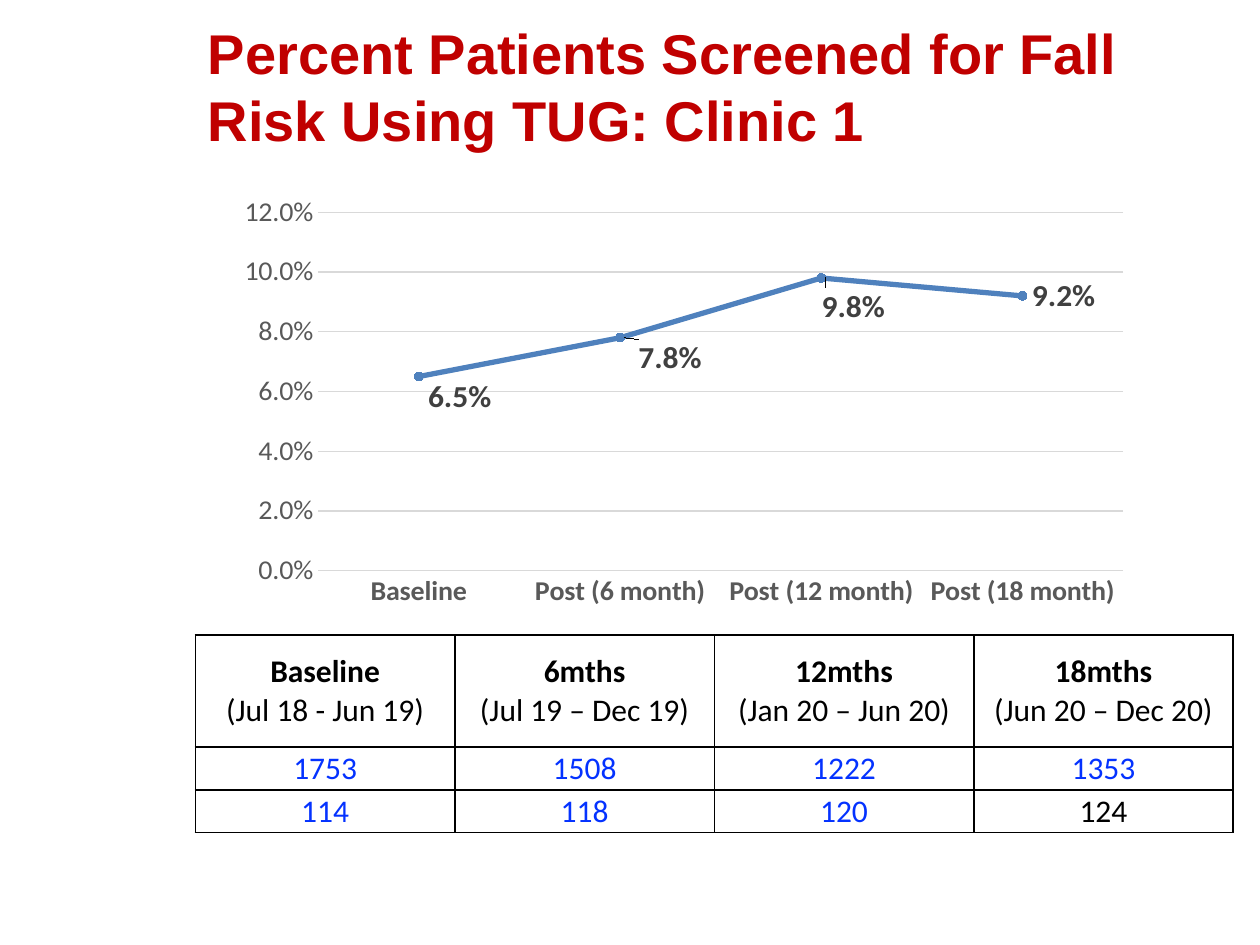
import pptx
import pptx.chart.data
import pptx.dml.color
import pptx.enum.chart
import pptx.enum.dml
import pptx.enum.text
import pptx.oxml
import pptx.oxml.ns
import pptx.util

Cm = pptx.util.Cm
Pt = pptx.util.Pt
RGB = pptx.dml.color.RGBColor.from_string
CENTER = pptx.enum.text.PP_ALIGN.CENTER
MIDDLE = pptx.enum.text.MSO_ANCHOR.MIDDLE

colors = {
    "title": "C00000", "line": "4F81BD", "grid": "D9D9D9",
    "axis": "595959", "label": "404040", "count": "0432FF", "text": "000000",
}


def format_font(font, size, color, bold=False, name="Calibri"):
    for key, value in {"size": Pt(size), "bold": bold, "name": name}.items():
        setattr(font, key, value)
    font.color.rgb = RGB(colors[color])


def manual_layout(target, **values):
    children = "".join(f'<c:{key} val="{value}"/>' for key, value in values.items())
    return pptx.oxml.parse_xml(
        f'<c:layout {pptx.oxml.ns.nsdecls("c")}><c:manualLayout>{target}{children}'
        "</c:manualLayout></c:layout>"
    )


presentation = pptx.Presentation()
presentation.slide_width = Cm(25.4)
presentation.slide_height = Cm(19.05)
slide = presentation.slides.add_slide(presentation.slide_layouts[6])

title = slide.shapes.add_textbox(Cm(3.94), Cm(0.23), Cm(19.74), Cm(3))
title.text_frame.word_wrap = True
title.text_frame.vertical_anchor = MIDDLE
run = title.text_frame.paragraphs[0].add_run()
run.text = "Percent Patients Screened for Fall Risk Using TUG: Clinic 1"
format_font(run.font, 32, "title", True, "Arial")

chart_data = pptx.chart.data.CategoryChartData(number_format="0.0%")
chart_data.categories = ["Baseline", "Post (6 month)", "Post (12 month)", "Post (18 month)"]
chart_data.add_series("Series 1", [0.065, 0.078, 0.098, 0.092])
chart = slide.shapes.add_chart(
    pptx.enum.chart.XL_CHART_TYPE.LINE_MARKERS,
    Cm(4.65), Cm(3.84), Cm(18.16), Cm(8.43), chart_data,
).chart
format_font(chart.font, 10, "text")
chart.has_legend = False
chart.has_title = False

plot_area = chart.element.xpath(".//c:plotArea")[0]
for layout in plot_area.xpath("./c:layout"):
    plot_area.remove(layout)
plot_area.insert(0, manual_layout(
    '<c:layoutTarget val="inner"/>', xMode="edge", yMode="edge",
    x=0.097, y=0.054, w=0.894, h=0.885,
))

for axis, bold in ((chart.category_axis, True), (chart.value_axis, False)):
    format_font(axis.tick_labels.font, 16, "axis", bold)
    axis.major_tick_mark = pptx.enum.chart.XL_TICK_MARK.NONE
    axis.minor_tick_mark = pptx.enum.chart.XL_TICK_MARK.NONE
for key, value in {"minimum_scale": 0, "maximum_scale": 0.12, "major_unit": 0.02}.items():
    setattr(chart.value_axis, key, value)
chart.value_axis.tick_labels.number_format = "0.0%"
chart.value_axis.tick_labels.number_format_is_linked = False
chart.value_axis.format.line.fill.background()
for line in (chart.category_axis.format.line, chart.value_axis.major_gridlines.format.line):
    line.color.rgb = RGB(colors["grid"])
    line.width = Pt(0.75)

plot = chart.plots[0]
plot.vary_by_categories = False
series = plot.series[0]
series.smooth = False
series.format.line.color.rgb = RGB(colors["line"])
series.format.line.width = Pt(3)
series.marker.style = pptx.enum.chart.XL_MARKER_STYLE.CIRCLE
series.marker.size = 5
series.marker.format.fill.solid()
series.marker.format.fill.fore_color.rgb = RGB(colors["line"])
series.marker.format.line.color.rgb = RGB(colors["line"])

label_formats = {
    "show_value": True, "number_format": "0.0%", "number_format_is_linked": False,
    "position": pptx.enum.chart.XL_LABEL_POSITION.RIGHT,
}
for key, value in label_formats.items():
    setattr(series.data_labels, key, value)
format_font(series.data_labels.font, 18, "label", True)
for index, (x, y) in enumerate([(0, 0.05), (0.01, 0.05), (-0.01, 0.07)]):
    label = series.points[index].data_label
    label.position = label_formats["position"]
    format_font(label.font, 18, "label", True)
    element = series.data_labels._element.xpath(f"./c:dLbl[c:idx/@val={index}]")[0]
    element.insert(1, manual_layout("", x=x, y=y))

rows = [
    ["Baseline\n(Jul 18 - Jun 19)", "6mths\n(Jul 19 – Dec 19)",
     "12mths\n(Jan 20 – Jun 20)", "18mths\n(Jun 20 – Dec 20)"],
    ["1753", "1508", "1222", "1353"],
    ["114", "118", "120", "124"],
]
row_heights = [2.26, 0.85, 0.85]
table = slide.shapes.add_table(
    3, 4, Cm(3.94), Cm(12.8), Cm(20.92), Cm(sum(row_heights))
).table
table.first_row = False
table.horz_banding = False
for column in table.columns:
    column.width = Cm(5.23)

cell_formats = {
    "margin_left": Cm(0.1), "margin_right": Cm(0.1),
    "margin_top": Cm(0.05), "margin_bottom": Cm(0.05),
}
for row_index, texts in enumerate(rows):
    table.rows[row_index].height = Cm(row_heights[row_index])
    for column_index, text in enumerate(texts):
        cell = table.cell(row_index, column_index)
        for key, value in cell_formats.items():
            setattr(cell, key, value)
        if row_index == 0 or column_index == 3:
            cell.vertical_anchor = MIDDLE
        cell.fill.background()
        cell.text = text
        color = "text" if row_index == 0 or text == "124" else "count"
        for line_index, paragraph in enumerate(cell.text_frame.paragraphs):
            paragraph.alignment = CENTER
            format_font(paragraph.runs[0].font, 18, color, row_index == 0 and line_index == 0)
        properties = cell._tc.get_or_add_tcPr()
        for position, side in enumerate("LRTB"):
            properties.insert(position, pptx.oxml.parse_xml(
                f'<a:ln{side} {pptx.oxml.ns.nsdecls("a")} w="12700"><a:solidFill>'
                f'<a:srgbClr val="{colors["text"]}"/></a:solidFill></a:ln{side}>'
            ))

presentation.save("out.pptx")
